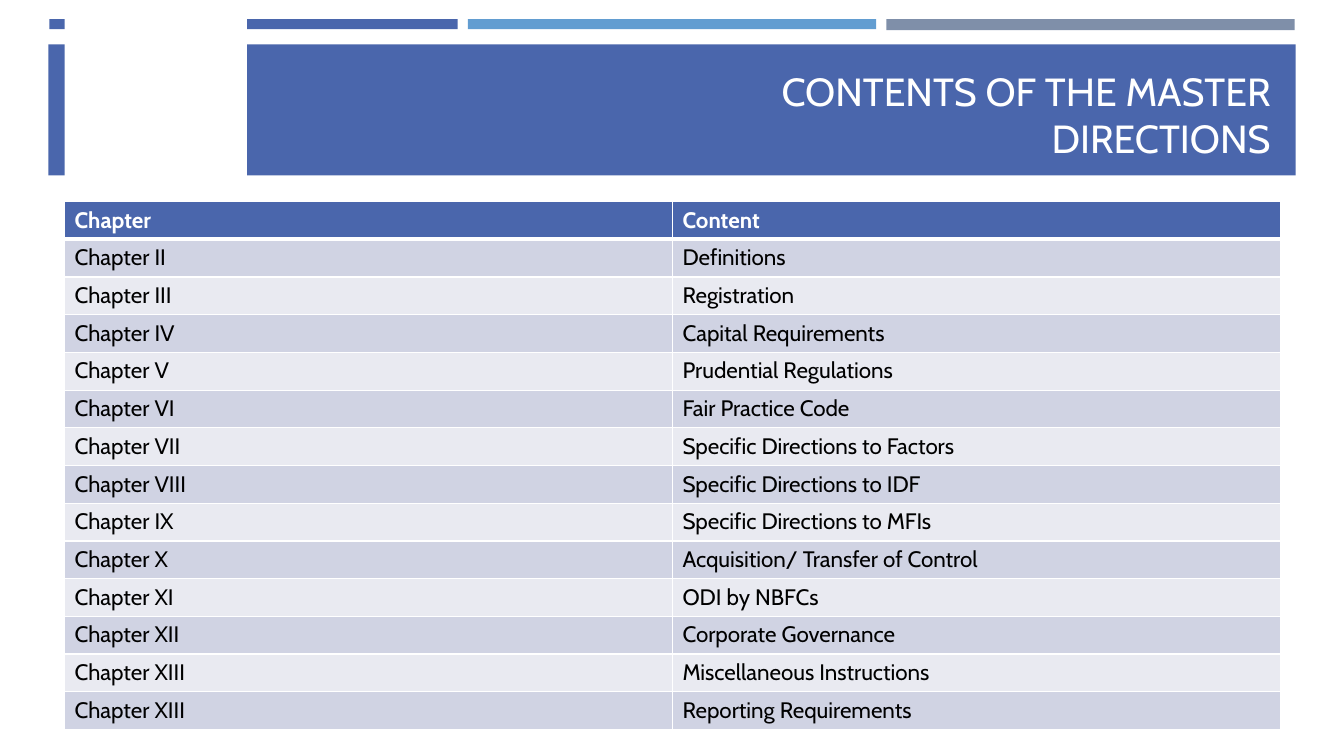
from dataclasses import dataclass

from lxml.etree import SubElement
from pptx import Presentation
from pptx.dml.color import RGBColor
from pptx.enum.shapes import MSO_SHAPE
from pptx.enum.text import MSO_ANCHOR, MSO_AUTO_SIZE, PP_ALIGN
from pptx.oxml.ns import qn
from pptx.slide import Slide
from pptx.table import _Cell
from pptx.text.text import _Paragraph
from pptx.util import Inches, Pt


@dataclass(frozen=True)
class Theme:
    font: str = "Cabin"
    title_size: int = 28
    table_size: int = 16
    blue: str = "4A66AC"
    sky: str = "629DD1"
    slate: str = "7F8FA9"
    dark_band: str = "D0D3E3"
    light_band: str = "E9EAF1"
    white: str = "FFFFFF"
    black: str = "000000"


@dataclass(frozen=True)
class Bar:
    left: float
    top: float
    width: float
    height: float
    color: str


THEME = Theme()

BARS = [
    Bar(0.49, 0.19, 4.05, 0.1, THEME.blue),
    Bar(8.79, 0.19, 4.05, 0.11, THEME.slate),
    Bar(4.64, 0.19, 4.05, 0.1, THEME.sky),
    Bar(0.48, 0.44, 12.37, 1.3, THEME.blue),
    Bar(0.64, 0, 1.81, 1.91, THEME.white),
]

CONTENTS = [
    ("Chapter", "Content"),
    ("Chapter II", "Definitions"),
    ("Chapter III", "Registration"),
    ("Chapter IV", "Capital Requirements"),
    ("Chapter V", "Prudential Regulations"),
    ("Chapter VI", "Fair Practice Code"),
    ("Chapter VII", "Specific Directions to Factors"),
    ("Chapter VIII", "Specific Directions to IDF"),
    ("Chapter IX", "Specific Directions to MFIs"),
    ("Chapter X", "Acquisition/ Transfer of Control"),
    ("Chapter XI", "ODI by NBFCs"),
    ("Chapter XII", "Corporate Governance"),
    ("Chapter XIII", "Miscellaneous Instructions"),
    ("Chapter XIII", "Reporting Requirements"),
]


def format_runs(paragraph: _Paragraph, size: int, color: str, bold: bool = False) -> None:
    for run in paragraph.runs:
        run.font.name = THEME.font
        run.font.size = Pt(size)
        run.font.bold = bold
        run.font.color.rgb = RGBColor.from_string(color)


def add_bar(slide: Slide, bar: Bar) -> None:
    shape = slide.shapes.add_shape(
        MSO_SHAPE.RECTANGLE,
        Inches(bar.left), Inches(bar.top), Inches(bar.width), Inches(bar.height),
    )
    shape.shadow.inherit = False
    shape.fill.solid()
    shape.fill.fore_color.rgb = RGBColor.from_string(bar.color)
    shape.line.fill.background()


def add_title(slide: Slide, text: str) -> None:
    """Fill the title placeholder and bring it in front of the bars."""
    title = slide.shapes.title
    title.left, title.top = Inches(5.63), Inches(0.54)
    title.width, title.height = Inches(7.07), Inches(1.11)
    frame = title.text_frame
    frame.text = text
    frame.word_wrap = True
    frame.auto_size = MSO_AUTO_SIZE.NONE
    frame.vertical_anchor = MSO_ANCHOR.BOTTOM
    frame.paragraphs[0].alignment = PP_ALIGN.RIGHT
    format_runs(frame.paragraphs[0], THEME.title_size, THEME.white)
    title.element.getparent().append(title.element)


def set_borders(cell: _Cell, top: int, bottom: int) -> None:
    """Draw white borders; the sides are always one point wide."""
    properties = cell._tc.get_or_add_tcPr()
    widths = {"a:lnL": 1, "a:lnR": 1, "a:lnT": top, "a:lnB": bottom}
    for position, (tag, width) in enumerate(widths.items()):
        line = SubElement(properties, qn(tag), w=str(Pt(width)))
        fill = SubElement(line, qn("a:solidFill"))
        SubElement(fill, qn("a:srgbClr"), val=THEME.white)
        properties.insert(position, line)


def add_contents_table(slide: Slide) -> None:
    height = Inches(5.24)
    table = slide.shapes.add_table(
        len(CONTENTS), 2, Inches(0.64), Inches(2), Inches(12.06), height
    ).table
    table.horz_banding = False
    for row_index, texts in enumerate(CONTENTS):
        table.rows[row_index].height = height // len(CONTENTS)
        header = row_index == 0
        band = THEME.dark_band if row_index % 2 else THEME.light_band
        for column_index, text in enumerate(texts):
            cell = table.cell(row_index, column_index)
            cell.text_frame.text = text
            format_runs(
                cell.text_frame.paragraphs[0],
                THEME.table_size,
                THEME.white if header else THEME.black,
                bold=header,
            )
            cell.fill.solid()
            cell.fill.fore_color.rgb = RGBColor.from_string(THEME.blue if header else band)
            set_borders(cell, top=3 if row_index == 1 else 1, bottom=3 if header else 1)


def main() -> None:
    presentation = Presentation()
    presentation.slide_width = Inches(13.33)
    presentation.slide_height = Inches(7.5)
    slide = presentation.slides.add_slide(presentation.slide_layouts.get_by_name("Title Only"))
    for bar in BARS:
        add_bar(slide, bar)
    add_title(slide, "CONTENTS OF THE MASTER DIRECTIONS")
    add_contents_table(slide)
    presentation.save("out.pptx")


if __name__ == "__main__":
    main()
